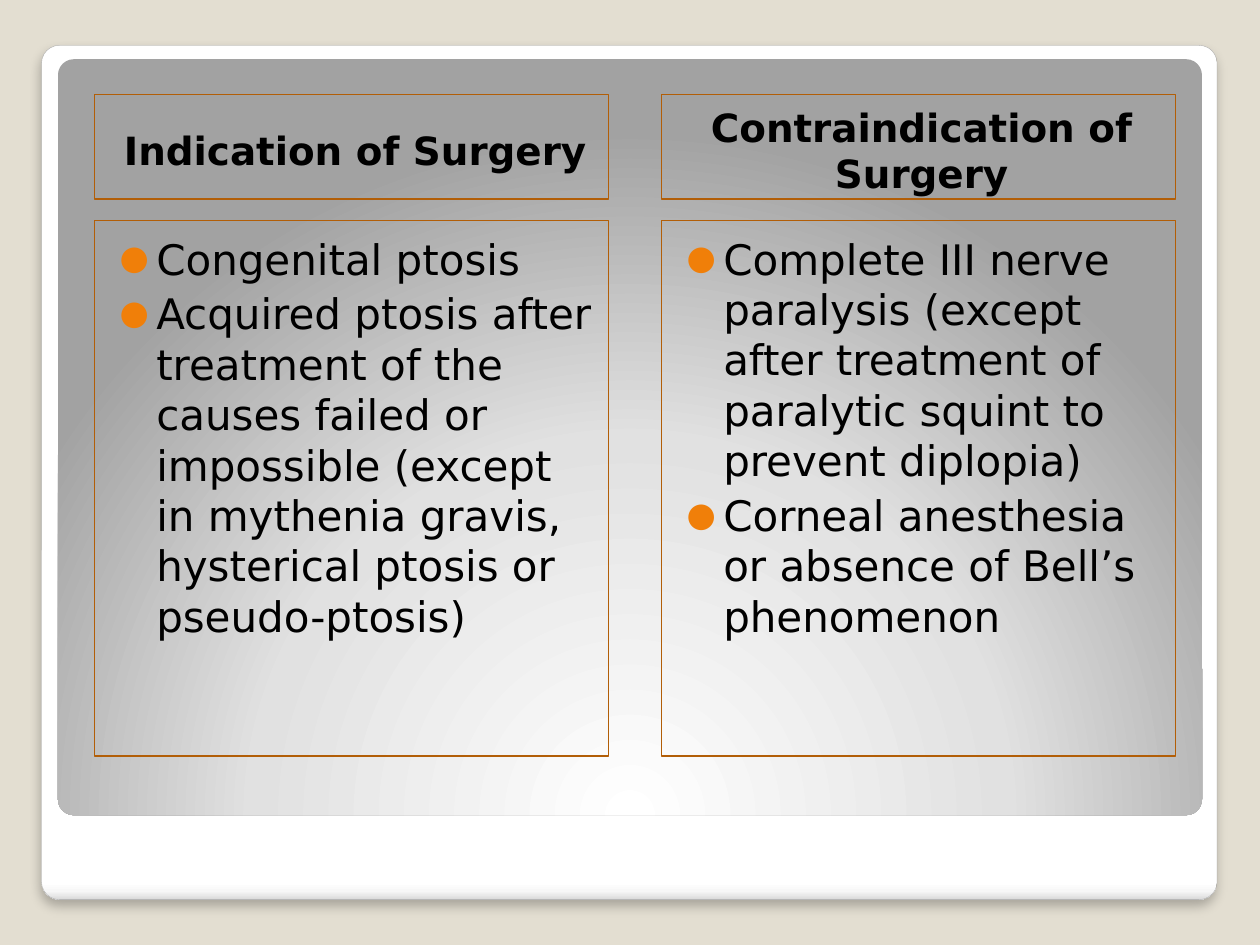
from dataclasses import dataclass

from lxml import etree
from pptx import Presentation
from pptx.dml.color import RGBColor
from pptx.enum.shapes import MSO_SHAPE
from pptx.enum.text import MSO_ANCHOR, MSO_AUTO_SIZE, PP_ALIGN
from pptx.oxml import parse_xml
from pptx.oxml.ns import qn
from pptx.util import Inches, Pt

ROUNDED = MSO_SHAPE.ROUNDED_RECTANGLE
TOP, MIDDLE = MSO_ANCHOR.TOP, MSO_ANCHOR.MIDDLE
NO_AUTOFIT = MSO_AUTO_SIZE.NONE
CENTER, LEFT = PP_ALIGN.CENTER, PP_ALIGN.LEFT

FONT = "DejaVu Sans"
COLORS = {
    "background": "E3DED1",
    "card_edge": "A4A4A4",
    "border": "B25E07",
    "bullet": "F07F09",
    "text": "000000",
}
COMPARISON_LAYOUT = 4
DRAWING_NS = "http://schemas.openxmlformats.org/drawingml/2006/main"
COLUMN_WIDTH = 4.08
BULLET_INDENT = Inches(0.29)


@dataclass
class Panel:
    left: float
    top: float
    width: float
    height: float
    stops: list[tuple[int, str]]
    direction: str


@dataclass
class Column:
    left: float
    heading_inset: float
    heading_index: int
    list_index: int
    heading: str
    items: list[str]


PANELS = [
    Panel(0.33, 0.36, 9.33, 6.78,
          [(0, "FFFFFF"), (98, "FFFFFF"), (99, "F7F7F7"), (100, "DADADA")],
          '<a:lin ang="5400000" scaled="0"/>'),
    Panel(0.46, 0.47, 9.08, 6,
          [(0, "FFFFFF"), (55, "E1E1E1"), (100, "A2A2A2")],
          '<a:path path="circle">'
          '<a:fillToRect l="50000" t="175000" r="50000" b="-75000"/></a:path>'),
]
COLUMNS = [
    Column(0.75, 0.16, 1, 2, "Indication of Surgery", [
        "Congenital ptosis",
        "Acquired ptosis after treatment of the causes failed or impossible "
        "(except in mythenia gravis, hysterical ptosis or pseudo-ptosis)",
    ]),
    Column(5.25, 0.15, 3, 4, "Contraindication of Surgery", [
        "Complete III nerve paralysis (except after treatment of paralytic "
        "squint to prevent diplopia)",
        "Corneal anesthesia or absence of Bell’s phenomenon",
    ]),
]


def color(name: str) -> RGBColor:
    return RGBColor.from_string(COLORS[name])


def add_panel(slide, panel: Panel, depth: int):
    """Draw a gradient panel behind the placeholders, at the given depth."""
    shape = slide.shapes.add_shape(
        ROUNDED, Inches(panel.left), Inches(panel.top),
        Inches(panel.width), Inches(panel.height))
    shape.adjustments[0] = 0.021
    shape.line.fill.background()
    shape.shadow.inherit = False
    stops = "".join(
        f'<a:gs pos="{position * 1000}"><a:srgbClr val="{value}"/></a:gs>'
        for position, value in panel.stops)
    gradient = parse_xml(
        f'<a:gradFill xmlns:a="{DRAWING_NS}" rotWithShape="1">'
        f'<a:gsLst>{stops}</a:gsLst>{panel.direction}</a:gradFill>')
    shape.element.spPr.find(qn("a:prstGeom")).addnext(gradient)
    slide.shapes.element.insert(2 + depth, shape.element)
    return shape


def add_card_edge(card) -> None:
    """Give the outer card its thin outline and soft shadow."""
    card.line.color.rgb = color("card_edge")
    card.line.width = Pt(0.16)
    card.element.spPr.find(qn("a:effectLst")).append(parse_xml(
        f'<a:outerShdw xmlns:a="{DRAWING_NS}" blurRad="{Pt(6)}" dist="{Pt(4)}" '
        'dir="5400000" algn="t" rotWithShape="0">'
        '<a:srgbClr val="000000"><a:alpha val="25000"/></a:srgbClr></a:outerShdw>'))


def add_bullet(para) -> None:
    properties = para._p.get_or_add_pPr()
    properties.set("marL", str(BULLET_INDENT))
    properties.set("indent", str(-BULLET_INDENT))
    bullet_color = etree.SubElement(properties, qn("a:buClr"))
    etree.SubElement(bullet_color, qn("a:srgbClr"), val=COLORS["bullet"])
    etree.SubElement(properties, qn("a:buSzPct"), val="80000")
    etree.SubElement(properties, qn("a:buFont"), typeface=FONT)
    etree.SubElement(properties, qn("a:buChar"), char="●")


def fill_box(box, left: float, top: float, height: float, inset: float,
             lines: list[str], size: float, is_heading: bool) -> None:
    box.left, box.top = Inches(left), Inches(top)
    box.width, box.height = Inches(COLUMN_WIDTH), Inches(height)
    box.line.color.rgb = color("border")
    box.line.width = Pt(0.75)
    frame = box.text_frame
    frame.word_wrap = True
    frame.auto_size = NO_AUTOFIT
    frame.vertical_anchor = MIDDLE if is_heading else TOP
    frame.margin_left, frame.margin_right = Inches(inset), Inches(0.1)
    frame.margin_top, frame.margin_bottom = Inches(0.1), Inches(0.05)
    frame.text = "\n".join(lines)
    for para in frame.paragraphs:
        para.alignment = CENTER if is_heading else LEFT
        para.space_before = Pt(2.5)
        para.font.name = FONT
        para.font.size = Pt(size)
        para.font.bold = is_heading
        para.font.color.rgb = color("text")
        if not is_heading:
            add_bullet(para)


def main() -> None:
    deck = Presentation()
    deck.slide_width, deck.slide_height = Inches(10), Inches(7.5)
    slide = deck.slides.add_slide(deck.slide_layouts[COMPARISON_LAYOUT])
    slide.background.fill.solid()
    slide.background.fill.fore_color.rgb = color("background")
    title = slide.shapes.title.element
    title.getparent().remove(title)

    card, _ = [add_panel(slide, panel, depth) for depth, panel in enumerate(PANELS)]
    add_card_edge(card)

    boxes = {box.placeholder_format.idx: box for box in slide.placeholders}
    for column in COLUMNS:
        fill_box(boxes[column.heading_index], column.left, 0.75, 0.83,
                 column.heading_inset, [column.heading], 22.2, True)
        fill_box(boxes[column.list_index], column.left, 1.75, 4.25,
                 0.2, column.items, 24, False)
    deck.save("out.pptx")


if __name__ == "__main__":
    main()
